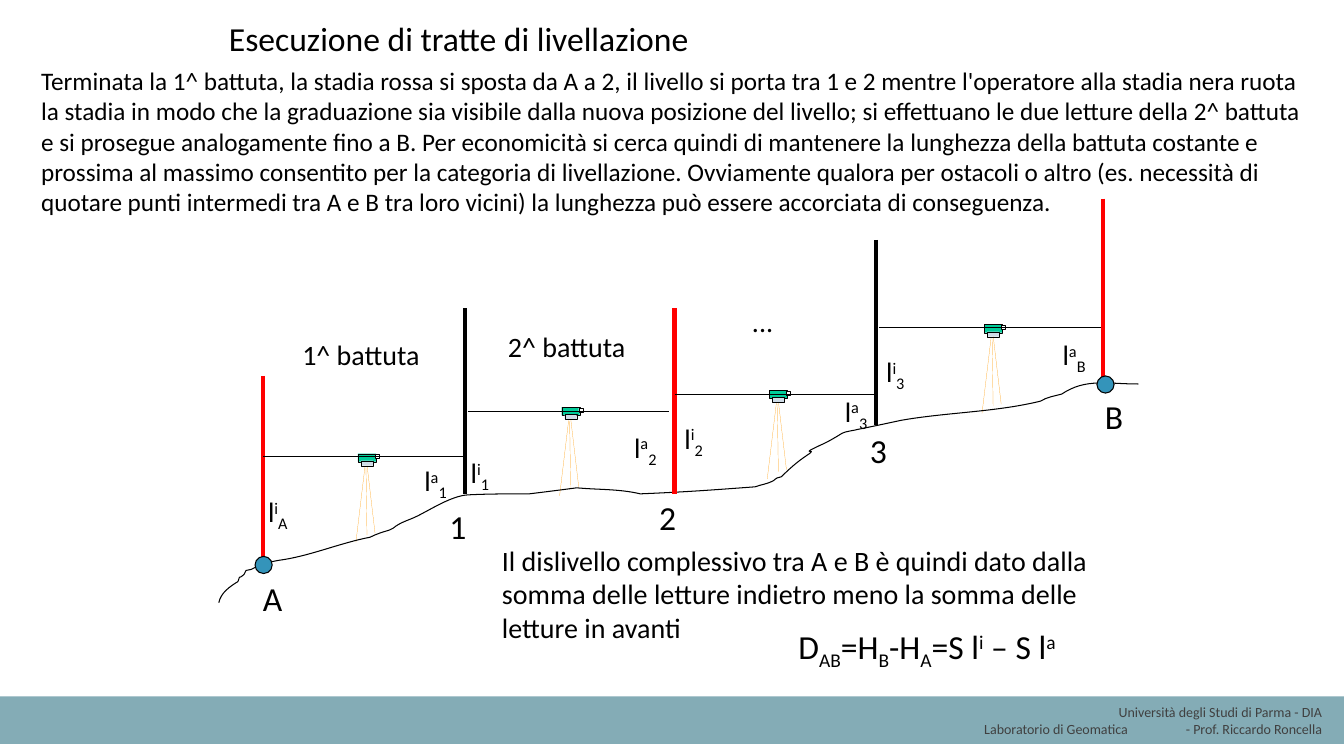
from lxml.etree import SubElement
from pptx import Presentation
from pptx.dml.color import RGBColor
from pptx.enum.shapes import MSO_CONNECTOR, MSO_SHAPE
from pptx.enum.text import MSO_ANCHOR, MSO_AUTO_SIZE, PP_ALIGN
from pptx.oxml.ns import qn
from pptx.util import Pt

PX = 9144
BLACK = RGBColor(0x00, 0x00, 0x00)
WHITE = RGBColor(0xFF, 0xFF, 0xFF)
RED = RGBColor(0xFF, 0x00, 0x00)
ORANGE = RGBColor(0xFF, 0x99, 0x00)
GREEN = RGBColor(0x00, 0xCC, 0x99)
PALE = RGBColor(0xCE, 0xDB, 0xE6)
BLUE = RGBColor(0x34, 0x94, 0xBA)
BAND = RGBColor(0x84, 0xAC, 0xB6)
GREY = RGBColor(0x40, 0x40, 0x40)

presentation = Presentation()
presentation.slide_width = 1333 * PX
presentation.slide_height = 750 * PX
slide = presentation.slides.add_slide(presentation.slide_layouts[5])
shapes = slide.shapes


def add_line(container, start, end, color, width):
    line = container.add_connector(
        MSO_CONNECTOR.STRAIGHT, *[value * PX for value in (*start, *end)])
    line.line.color.rgb = color
    line.line.width = Pt(width)
    SubElement(line._element.spPr, qn("a:effectLst"))


def write_text(shape, paragraphs, size, wrap, color=BLACK, align=PP_ALIGN.LEFT):
    frame = shape.text_frame
    frame.word_wrap = wrap
    frame.auto_size = MSO_AUTO_SIZE.SHAPE_TO_FIT_TEXT
    frame.vertical_anchor = MSO_ANCHOR.TOP
    for index, runs in enumerate(paragraphs):
        paragraph = frame.add_paragraph() if index else frame.paragraphs[0]
        paragraph.alignment = align
        for text, baseline in runs:
            run = paragraph.add_run()
            run.text = text
            run.font.name = "Calibri"
            run.font.size = Pt(size)
            run.font.color.rgb = color
            if baseline:
                run._r.get_or_add_rPr().set("baseline", str(baseline * 1000))


footer = shapes.add_shape(MSO_SHAPE.RECTANGLE, 0, 691 * PX, 1333 * PX, 47 * PX)
footer.shadow.inherit = False
footer.fill.solid()
footer.fill.fore_color.rgb = BAND
footer.line.fill.background()
credit = shapes.add_textbox(906 * PX, 693 * PX, 415 * PX, 44 * PX)
write_text(credit, [[("Università degli Studi di Parma - DIA", 0)],
                    [("Laboratorio di Geomatica\t- Prof. Riccardo Roncella", 0)]],
           10, True, GREY, PP_ALIGN.RIGHT)
tab_list = SubElement(credit.text_frame.paragraphs[1]._p.get_or_add_pPr(), qn("a:tabLst"))
SubElement(tab_list, qn("a:tab"), pos=str(200 * PX), algn="l")

tripod_legs = [((9, 11), (17, 79)), ((7, 13), (-2, 88)), ((8, 14), (9, 81))]
level_parts = [(0, 0, 18, 8, GREEN), (3, 7, 12, 5, PALE), (17, 1, 4, 4, WHITE)]
for left, top in [(355, 450), (557, 404), (763, 387), (976, 322)]:
    level = shapes.add_group_shape()
    for (x1, y1), (x2, y2) in tripod_legs:
        add_line(level.shapes, (left + x1, top + y1), (left + x2, top + y2), ORANGE, 0.13)
    for x, y, width, height, color in level_parts:
        part = level.shapes.add_shape(
            MSO_SHAPE.RECTANGLE, (left + x) * PX, (top + y) * PX, width * PX, height * PX)
        part.shadow.inherit = False
        part.fill.solid()
        part.fill.fore_color.rgb = color
        part.line.color.rgb = BLACK
        part.line.width = Pt(0.13)

ground_left, ground_top, ground_width, ground_height = 217, 375, 912, 223
ground_curves = [
    (219, 588, 228, 582, 236, 577), (239, 569, 235, 576, 242, 570),
    (243, 569, 243, 567, 244, 566), (246, 565, 247, 565, 249, 565),
    (259, 560, 265, 558, 276, 556), (307, 552, 336, 539, 367, 533),
    (373, 530, 379, 528, 386, 526), (388, 525, 390, 524, 390, 524),
    (397, 518, 406, 516, 414, 512), (428, 505, 448, 492, 464, 491),
    (484, 490, 505, 490, 525, 490), (541, 488, 557, 486, 572, 484),
    (593, 486, 614, 485, 635, 490), (683, 488, 708, 486, 749, 483),
    (754, 481, 762, 480, 767, 477), (772, 473, 769, 475, 775, 473),
    (783, 465, 791, 458, 800, 452), (814, 443, 790, 453, 813, 442),
    (820, 439, 827, 435, 835, 430), (838, 428, 848, 427, 851, 426),
    (866, 423, 880, 420, 894, 417), (940, 409, 987, 409, 1032, 398),
    (1038, 394, 1046, 393, 1053, 391), (1077, 375, 1098, 381, 1129, 381),
]
builder = shapes.build_freeform(ground_left, ground_top + ground_height, scale=PX)
builder.add_line_segments([curve[4:] for curve in ground_curves], close=False)
ground = builder.convert_to_shape()
ground.left, ground.top = ground_left * PX, ground_top * PX
ground.width, ground.height = ground_width * PX, ground_height * PX
outline = ground._element.spPr.find(".//" + qn("a:path"))
outline.set("w", str(ground_width))
outline.set("h", str(ground_height))
start_point = outline.find(qn("a:moveTo")).find(qn("a:pt"))
start_point.set("x", "0")
start_point.set("y", str(ground_height))
for segment, curve in zip(outline.findall(qn("a:lnTo")), ground_curves):
    bezier = SubElement(outline, qn("a:cubicBezTo"))
    for x, y in zip(curve[::2], curve[1::2]):
        SubElement(bezier, qn("a:pt"), x=str(x - ground_left), y=str(y - ground_top))
    outline.remove(segment)
ground.shadow.inherit = False
ground.fill.background()
ground.line.color.rgb = BLACK
ground.line.width = Pt(0.75)

for x, top, color in [(261, 373, RED), (461, 306, BLACK), (669, 306, RED),
                      (869, 238, BLACK), (1094, 197, RED)]:
    add_line(shapes, (x, top), (x, top + 184), color, 3)
for left, right, y in [(261, 461, 453), (464, 664, 408), (669, 869, 391), (872, 1092, 325)]:
    add_line(shapes, (left, y), (right, y), BLACK, 0.75)

for left, top in [(253, 552), (1088, 373)]:
    benchmark = shapes.add_shape(MSO_SHAPE.OVAL, left * PX, top * PX, 17 * PX, 17 * PX)
    benchmark.shadow.inherit = False
    benchmark.fill.solid()
    benchmark.fill.fore_color.rgb = BLUE
    benchmark.line.color.rgb = BLACK
    benchmark.line.width = Pt(0.75)

title = shapes.title
title.left, title.top, title.width, title.height = [v * PX for v in (217, 13, 485, 51)]
write_text(title, [[("Esecuzione di tratte di livellazione", 0)]], 24, False)

body_text = (
    "Terminata la 1^ battuta, la stadia rossa si sposta da A a 2, il livello si porta "
    "tra 1 e 2 mentre l'operatore alla stadia nera ruota la stadia in modo che la "
    "graduazione sia visibile dalla nuova posizione del livello; si effettuano le due "
    "letture della 2^ battuta e si prosegue analogamente fino a B. Per economicità si "
    "cerca quindi di mantenere la lunghezza della battuta costante e prossima al massimo "
    "consentito per la categoria di livellazione. Ovviamente qualora per ostacoli o altro "
    "(es. necessità di quotare punti intermedi tra A e B tra loro vicini) la lunghezza può "
    "essere accorciata di conseguenza.")
conclusion = (
    "Il dislivello complessivo tra A e B è quindi dato dalla somma delle letture "
    "indietro meno la somma delle letture in avanti")
formula = [("D", 0), ("AB", -25), ("=H", 0), ("B", -25), ("-H", 0), ("A", -25),
           ("=S l", 0), ("i", 30), (" – S l", 0), ("a", 30)]
texts = [
    (31, 60, 1276, 162, [(body_text, 0)], 18, True),
    (488, 534, 638, 111, [(conclusion, 0)], 20, True),
    (782, 616, 323, 50, formula, 24, True),
    (290, 330, 137, 44, [("1^ battuta", 0)], 20, False),
    (494, 322, 137, 44, [("2^ battuta", 0)], 20, False),
    (736, 297, 41, 43, [("...", 0)], 20, False),
]
for left, top, width, name in [(251, 568, 39, "A"), (436, 497, 37, "1"), (644, 488, 37, "2"),
                               (853, 422, 37, "3"), (1086, 388, 38, "B")]:
    texts.append((left, top, width, 50, [(name, 0)], 24, False))
for left, top, width, sight, point in [
        (256, 486, 41, "i", "A"), (457, 447, 40, "i", "1"), (669, 413, 40, "i", "2"),
        (869, 347, 40, "i", "3"), (411, 455, 45, "a", "1"), (619, 422, 45, "a", "2"),
        (828, 386, 45, "a", "3"), (1044, 330, 45, "a", "B")]:
    texts.append((left, top, width, 44, [("l", 0), (sight, 30), (point, -25)], 20, False))
for left, top, width, height, runs, size, wrap in texts:
    box = shapes.add_textbox(left * PX, top * PX, width * PX, height * PX)
    write_text(box, [runs], size, wrap)

presentation.save("out.pptx")
